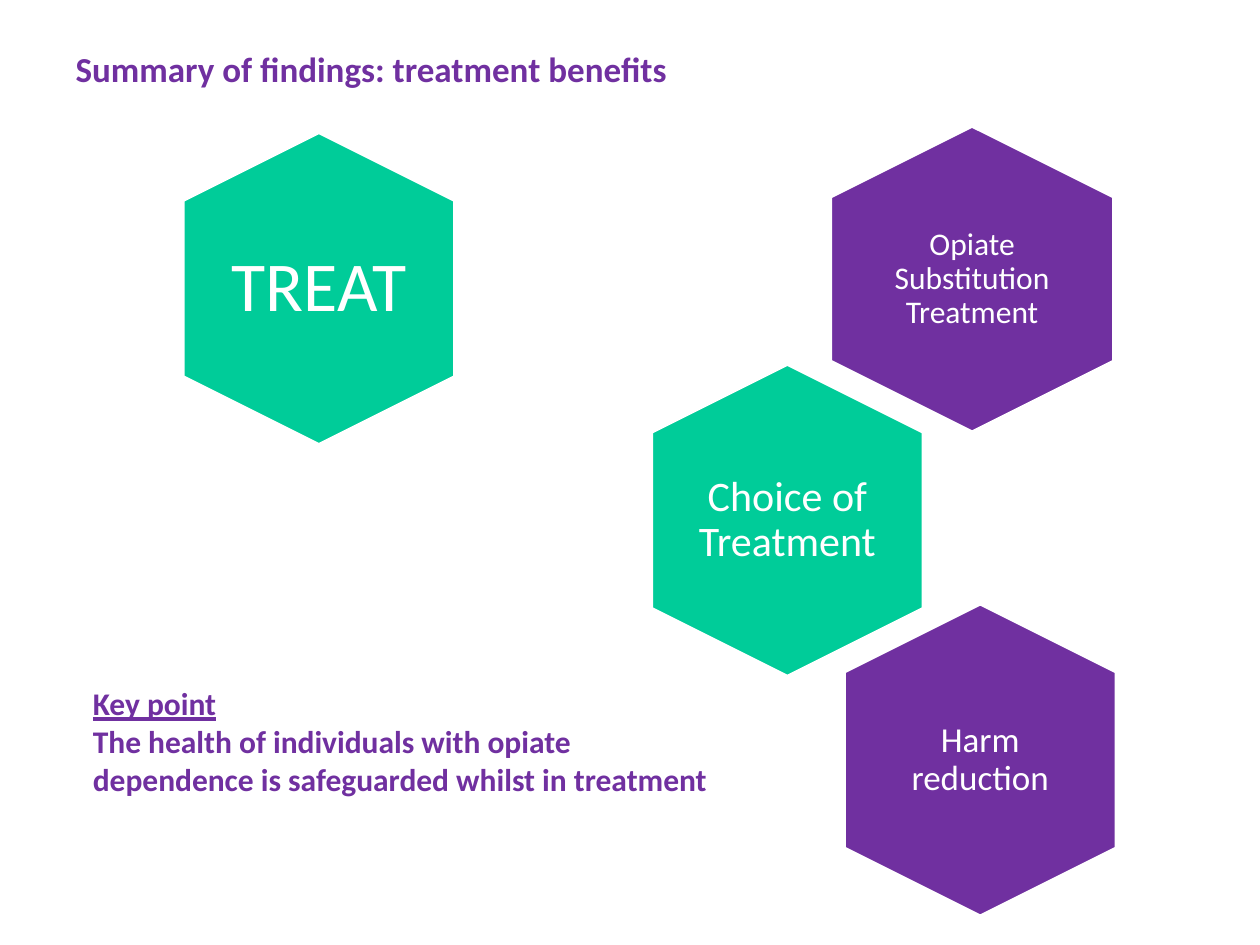
"""Build the treatment benefits summary slide."""
from pptx import Presentation
from pptx.dml.color import RGBColor
from pptx.enum.text import MSO_ANCHOR, MSO_AUTO_SIZE, PP_ALIGN
from pptx.util import Pt

COLORS = {"purple": "7030A0", "green": "00CC99", "white": "FFFFFF"}


class SlideBuilder:
    """Hold the style and the current slide."""

    font = "Calibri"

    def __init__(self, prs):
        """Add a slide with a title only."""
        self.slide = prs.slides.add_slide(prs.slide_layouts[5])

    def color(self, name):
        """Return a palette colour."""
        return RGBColor.from_string(COLORS[name])

    def add_text(self, p, text, color, size, **fmt):
        """Add one formatted run to a paragraph."""
        r = p.add_run()
        r.text = text
        for key, value in {"name": self.font, "size": Pt(size), **fmt}.items():
            setattr(r.font, key, value)
        r.font.color.rgb = self.color(color)

    def title(self, text, x, y, w, h):
        """Place and fill the title placeholder."""
        sp = self.slide.shapes.title
        for key, value in zip(("left", "top", "width", "height"), (x, y, w, h)):
            setattr(sp, key, Pt(value))
        tf = sp.text_frame
        tf.vertical_anchor = MSO_ANCHOR.BOTTOM
        tf.auto_size = MSO_AUTO_SIZE.NONE
        p = tf.paragraphs[0]
        p.alignment = PP_ALIGN.LEFT
        self.add_text(p, text, "purple", 20, bold=True)

    def hexagon(self, text, x, y, w, h, fill, size, inset):
        """Draw an upright hexagon whose shoulders drop a quarter of its width."""
        drop = w / 4
        points = [(x + w / 2, y), (x + w, y + drop), (x + w, y + h - drop),
                  (x + w / 2, y + h), (x, y + h - drop), (x, y + drop)]
        first, *rest = [(Pt(px), Pt(py)) for px, py in points]
        fb = self.slide.shapes.build_freeform(*first)
        fb.add_line_segments(rest, close=True)
        sp = fb.convert_to_shape()
        sp.shadow.inherit = False
        sp.fill.solid()
        sp.fill.fore_color.rgb = self.color(fill)
        sp.line.color.rgb = self.color("white")
        sp.line.width = Pt(2)
        tf = sp.text_frame
        side, end = inset
        fmt = {"word_wrap": True, "vertical_anchor": MSO_ANCHOR.MIDDLE,
               "margin_left": Pt(side), "margin_right": Pt(side),
               "margin_top": Pt(end), "margin_bottom": Pt(end)}
        for key, value in fmt.items():
            setattr(tf, key, value)
        p = tf.paragraphs[0]
        p.alignment = PP_ALIGN.CENTER
        p.line_spacing = 0.9
        self.add_text(p, text, "white", size)

    def key_point(self, heading, text, x, y, w, h):
        """Add an underlined heading with a statement below it."""
        sp = self.slide.shapes.add_textbox(Pt(x), Pt(y), Pt(w), Pt(h))
        tf = sp.text_frame
        tf.word_wrap = True
        tf.auto_size = MSO_AUTO_SIZE.SHAPE_TO_FIT_TEXT
        self.add_text(tf.paragraphs[0], heading, "purple", 18, bold=True, underline=True)
        self.add_text(tf.add_paragraph(), text, "purple", 18, bold=True)


def main():
    """Build and save the slide."""
    prs = Presentation()
    prs.slide_width, prs.slide_height = Pt(720), Pt(540)
    s = SlideBuilder(prs)
    s.title("Summary of findings: treatment benefits", 36, 15, 463, 39.6)
    w, h = 155.5, 178.6
    s.hexagon("Opiate Substitution Treatment", 474.5, 72, 162, 175, "purple", 18, (32, 34))
    s.hexagon("TREAT", 104.5, 75.6, w, h, "green", 40, (24.5, 28))
    s.hexagon("Harm reduction", 482.4, 345, w, h, "purple", 20, (30, 34))
    s.hexagon("Choice of Treatment", 372.2, 208, w, h, "green", 24, (24.5, 28))
    s.key_point("Key point",
                "The health of individuals with opiate dependence is "
                "safeguarded whilst in treatment", 46, 387.4, 376.6, 72.7)
    prs.save("out.pptx")


if __name__ == "__main__":
    main()
